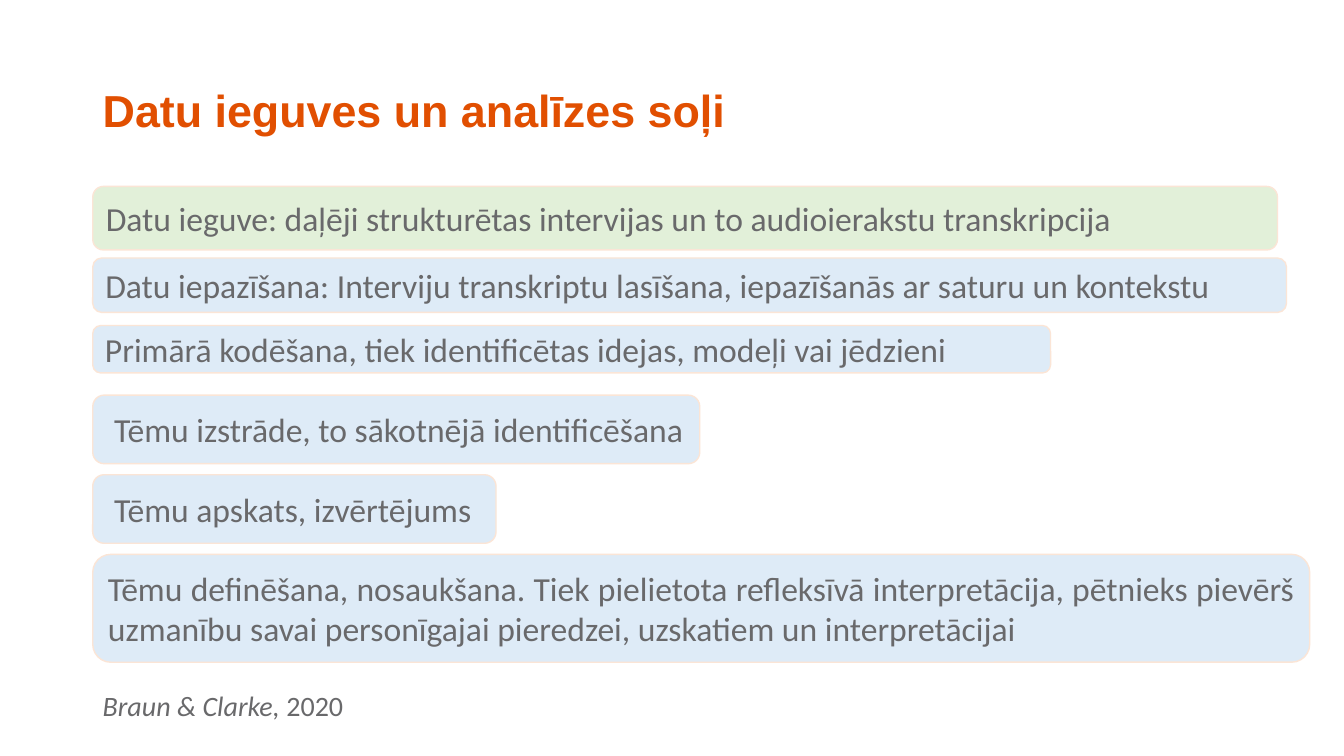
from dataclasses import dataclass

from pptx import Presentation
from pptx.dml.color import RGBColor
from pptx.enum.shapes import MSO_SHAPE
from pptx.enum.text import MSO_ANCHOR, PP_ALIGN
from pptx.slide import Slide
from pptx.util import Inches, Pt

COLORS = {
    "title": "E14F01",
    "text": "69696B",
    "collection": "E2F0D9",
    "analysis": "DEEBF7",
    "outline": "FBE5D6",
}
LEFT = 0.92
INSET = 0.1


@dataclass(frozen=True)
class Step:
    text: str
    top: float
    width: float
    height: float
    fill: str = "analysis"
    indent: float = 0


STEPS = [
    Step("Datu ieguve: daļēji strukturētas intervijas un to audioierakstu transkripcija",
         1.85, 11.75, 0.63, fill="collection"),
    Step("Datu iepazīšana: Interviju transkriptu lasīšana, iepazīšanās ar saturu un kontekstu",
         2.56, 11.84, 0.54),
    Step("Primārā kodēšana, tiek identificētas idejas, modeļi vai jēdzieni",
         3.23, 9.5, 0.47),
    Step("Tēmu izstrāde, to sākotnējā identificēšana", 3.92, 6.02, 0.68, indent=0.08),
    Step("Tēmu apskats, izvērtējums", 4.71, 4, 0.68, indent=0.08),
    Step("Tēmu definēšana, nosaukšana. Tiek pielietota refleksīvā interpretācija, "
         "pētnieks pievērš uzmanību savai personīgajai pieredzei, uzskatiem un interpretācijai",
         5.5, 12.07, 1.07),
]


def color(name: str) -> RGBColor:
    return RGBColor.from_string(COLORS[name])


def style_font(font, name: str, size: float, color_name: str) -> None:
    font.name = name
    font.size = Pt(size)
    font.color.rgb = color(color_name)


def add_title(slide: Slide, text: str) -> None:
    title = slide.shapes.add_textbox(Inches(LEFT), Inches(0.4), Inches(11.5), Inches(1.45))
    frame = title.text_frame
    frame.word_wrap = True
    frame.vertical_anchor = MSO_ANCHOR.MIDDLE
    heading = frame.paragraphs[0]
    heading.text = text
    heading.line_spacing = 0.9
    style_font(heading.font, "Arial", 32, "title")
    heading.font.bold = True


def add_step(slide: Slide, step: Step) -> None:
    bar = slide.shapes.add_shape(
        MSO_SHAPE.ROUNDED_RECTANGLE,
        Inches(LEFT), Inches(step.top), Inches(step.width), Inches(step.height))
    bar.shadow.inherit = False
    bar.fill.solid()
    bar.fill.fore_color.rgb = color(step.fill)
    bar.line.color.rgb = color("outline")
    bar.line.width = Pt(1)

    frame = bar.text_frame
    frame.word_wrap = True
    frame.vertical_anchor = MSO_ANCHOR.MIDDLE
    frame.margin_left = Inches(INSET + step.indent)
    frame.margin_right = Inches(INSET - step.indent)
    label = frame.paragraphs[0]
    label.text = step.text
    label.alignment = PP_ALIGN.JUSTIFY
    style_font(label.font, "Calibri", 24, "text")


def add_citation(slide: Slide, authors: str, year: str) -> None:
    citation = slide.shapes.add_textbox(Inches(LEFT), Inches(6.78), Inches(4.48), Inches(0.44))
    citation.text_frame.word_wrap = True
    reference = citation.text_frame.paragraphs[0]
    style_font(reference.font, "Calibri", 20, "text")
    for text, italic in ((authors, True), (year, False)):
        run = reference.add_run()
        run.text = text
        run.font.italic = italic


def main() -> None:
    presentation = Presentation()
    presentation.slide_width = Inches(13.33)
    presentation.slide_height = Inches(7.5)
    slide = presentation.slides.add_slide(presentation.slide_layouts[6])

    # Heading
    add_title(slide, "Datu ieguves un analīzes soļi")

    # Data collection and analysis steps
    for step in STEPS:
        add_step(slide, step)

    # Method reference
    add_citation(slide, "Braun & Clarke,", " 2020")

    presentation.save("out.pptx")


if __name__ == "__main__":
    main()
